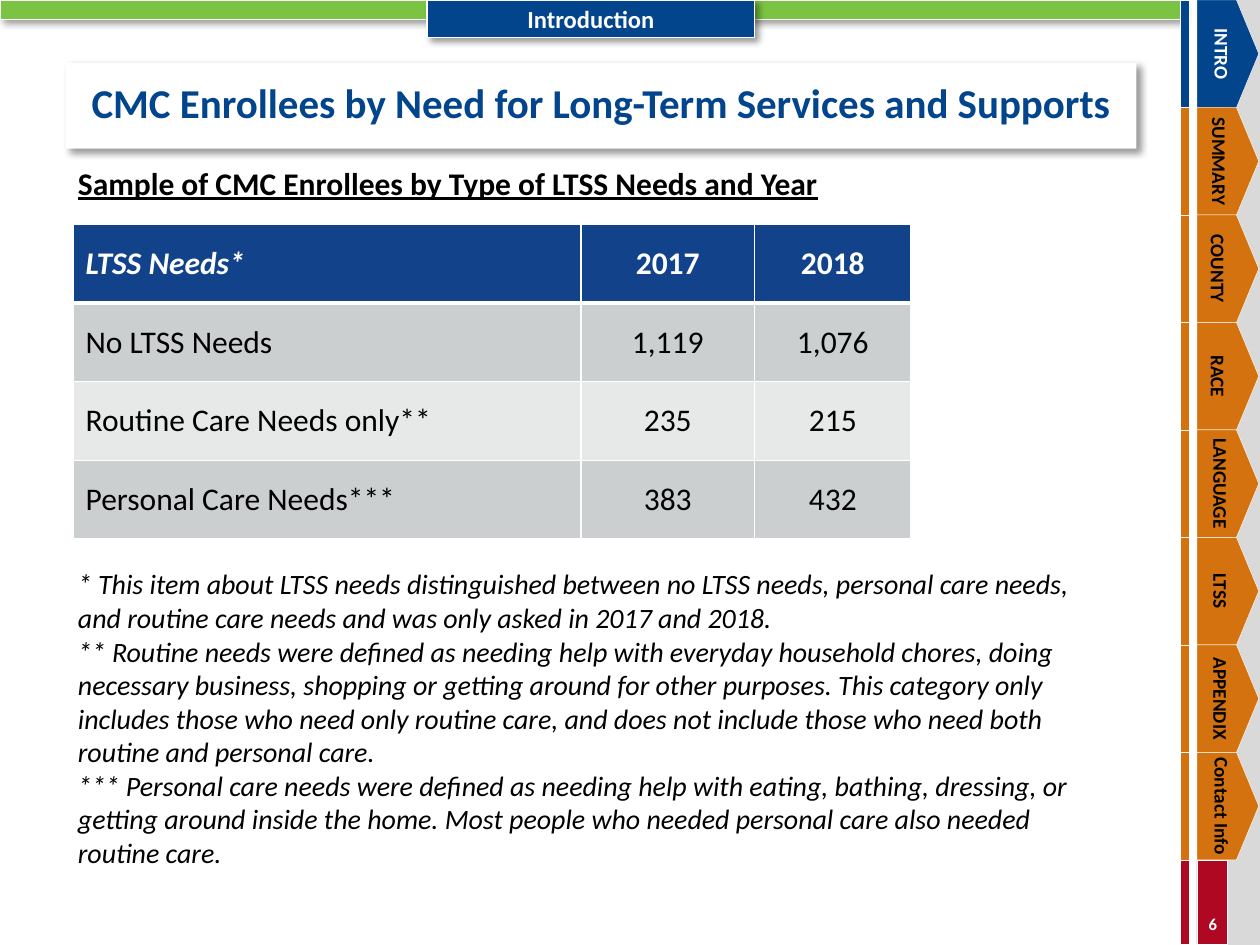
from lxml.etree import SubElement
from pptx import Presentation
from pptx.dml.color import RGBColor
from pptx.enum.shapes import MSO_SHAPE
from pptx.enum.text import MSO_ANCHOR, MSO_AUTO_SIZE, PP_ALIGN
from pptx.oxml.ns import qn
from pptx.util import Inches, Pt

WHITE = RGBColor(0xFF, 0xFF, 0xFF)
BLACK = RGBColor(0, 0, 0)
INK = RGBColor(0x01, 0x02, 0x04)
BLUE = RGBColor(0x02, 0x45, 0x8C)
HEADER_BLUE = RGBColor(0x12, 0x43, 0x8A)
ORANGE = RGBColor(0xD4, 0x72, 0x0F)
RED = RGBColor(0xAE, 0x08, 0x23)
GREEN = RGBColor(0x7B, 0xC3, 0x42)
GREY = RGBColor(0xD9, 0xD9, 0xD9)
BAND_DARK = RGBColor(0xCC, 0xCF, 0xD0)
BAND_LIGHT = RGBColor(0xE7, 0xE9, 0xE9)

SECTION = "Introduction"
TITLE = "CMC Enrollees by Need for Long-Term Services and Supports"
SUBTITLE = "Sample of CMC Enrollees by Type of LTSS Needs and Year"
PAGE_NUMBER = "6"
TABS = [
    ("INTRO", 9.61), ("SUMMARY", 9.59), ("COUNTY", 9.58), ("RACE", 9.58),
    ("LANGUAGE", 9.6), ("LTSS", 9.6), ("APPENDIX", 9.6), ("Contact Info", 9.61),
]
ROWS = [
    ("LTSS Needs*", "2017", "2018"),
    ("No LTSS Needs", "1,119", "1,076"),
    ("Routine Care Needs only**", "235", "215"),
    ("Personal Care Needs***", "383", "432"),
]
COLUMN_WIDTHS = [4.03, 1.38, 1.24]
ROW_HEIGHT = 0.625
NOTES = [
    "* This item about LTSS needs distinguished between no LTSS needs, personal care needs, "
    "and routine care needs and was only asked in 2017 and 2018.",
    "** Routine needs were defined as needing help with everyday household chores, doing "
    "necessary business, shopping or getting around for other purposes. This category only "
    "includes those who need only routine care, and does not include those who need both "
    "routine and personal care.",
    "*** Personal care needs were defined as needing help with eating, bathing, dressing, or "
    "getting around inside the home. Most people who needed personal care also needed "
    "routine care.",
]
STRIP_LEFT, STRIP_WIDTH = 9.37, 0.07
TAB_LEFT, TAB_WIDTH, TAB_HEIGHT = 9.5, 0.49, 0.853


def write(frame, text, size=18, color=BLACK, bold=False, italic=False, underline=False,
          align=PP_ALIGN.LEFT, anchor=MSO_ANCHOR.TOP, spacing=None, inset=None):
    frame.word_wrap = True
    frame.auto_size = MSO_AUTO_SIZE.NONE
    frame.vertical_anchor = anchor
    if inset is not None:
        frame.margin_left = frame.margin_right = Inches(inset)
        frame.margin_top = frame.margin_bottom = Inches(inset)
    lines = [text] if isinstance(text, str) else text
    for index, line in enumerate(lines):
        para = frame.paragraphs[0] if index == 0 else frame.add_paragraph()
        para.alignment = align
        if spacing:
            para.line_spacing = spacing
        span = para.add_run()
        span.text = line
        font = span.font
        font.name, font.size, font.color.rgb = "Calibri", Pt(size), color
        font.bold, font.italic, font.underline = bold, italic, underline


def add_text(page, area, text, **style):
    box = page.shapes.add_textbox(*map(Inches, area))
    write(box.text_frame, text, **style)
    return box


def add_shadow(shape):
    shape.shadow.inherit = False
    effects = shape.element.spPr.find(qn("a:effectLst"))
    outer = SubElement(effects, qn("a:outerShdw"), blurRad=str(Pt(4)), dist=str(Pt(3)),
                       dir=str(45 * 60000), algn="tl", rotWithShape="0")
    tint = SubElement(outer, qn("a:srgbClr"), val="000000")
    SubElement(tint, qn("a:alpha"), val="40000")


def add_block(page, area, color, kind=MSO_SHAPE.RECTANGLE, line=0.25):
    shape = page.shapes.add_shape(kind, *map(Inches, area))
    shape.shadow.inherit = False
    shape.fill.solid()
    shape.fill.fore_color.rgb = color
    if line:
        shape.line.color.rgb = WHITE
        shape.line.width = Pt(line)
    else:
        shape.line.fill.background()
    return shape


def add_borders(cell, bottom):
    properties = cell._tc.get_or_add_tcPr()
    for side, width in (("L", 1), ("R", 1), ("T", 1), ("B", bottom)):
        edge = SubElement(properties, qn(f"a:ln{side}"), w=str(Pt(width)))
        fill = SubElement(edge, qn("a:solidFill"))
        SubElement(fill, qn("a:srgbClr"), val=str(WHITE))


def add_tabs(page):
    for index, (label, label_left) in enumerate(TABS):
        top = index * TAB_HEIGHT
        current = index == 0
        color = BLUE if current else ORANGE
        add_block(page, (STRIP_LEFT, top, STRIP_WIDTH, TAB_HEIGHT), color)
        tab = add_block(page, (TAB_LEFT, top, TAB_WIDTH, TAB_HEIGHT), color, MSO_SHAPE.PENTAGON)
        tab.adjustments[0] = 0.36
        box = add_text(page, (label_left, top, 0.3, TAB_HEIGHT), label, size=11, bold=True,
                       color=WHITE if current else BLACK, align=PP_ALIGN.CENTER,
                       anchor=MSO_ANCHOR.BOTTOM, spacing=0.85, inset=0)
        box.element.txBody.bodyPr.set("vert", "vert")


def add_needs_table(page):
    table = page.shapes.add_table(
        len(ROWS), len(COLUMN_WIDTHS), Inches(0.58), Inches(1.78),
        Inches(sum(COLUMN_WIDTHS)), Inches(ROW_HEIGHT * len(ROWS))).table
    table.horz_banding = False
    for column, width in zip(table.columns, COLUMN_WIDTHS):
        column.width = Inches(width)
    for r, values in enumerate(ROWS):
        table.rows[r].height = Inches(ROW_HEIGHT)
        header = r == 0
        band = HEADER_BLUE if header else (BAND_DARK if r % 2 else BAND_LIGHT)
        for c, value in enumerate(values):
            cell = table.cell(r, c)
            add_borders(cell, bottom=3 if header else 1)
            cell.fill.solid()
            cell.fill.fore_color.rgb = band
            cell.vertical_anchor = MSO_ANCHOR.MIDDLE
            if c and not header:
                cell.margin_left = cell.margin_right = Inches(0.05)
                cell.margin_top = cell.margin_bottom = 0
            para = cell.text_frame.paragraphs[0]
            para.alignment = PP_ALIGN.CENTER if c else PP_ALIGN.LEFT
            span = para.add_run()
            span.text = value
            font = span.font
            font.name, font.size = "Calibri", Pt(18)
            font.bold, font.italic = header, header and c == 0
            font.color.rgb = WHITE if header else (INK if c else BLACK)


def main():
    deck = Presentation()
    deck.slide_width, deck.slide_height = Inches(10), Inches(7.5)
    page = deck.slides.add_slide(deck.slide_layouts[5])

    add_block(page, (9.7, 0, 0.3, 7.5), GREY, line=0)
    foot = TAB_HEIGHT * len(TABS)
    for left, width in ((TAB_LEFT, 0.24), (STRIP_LEFT, STRIP_WIDTH)):
        add_block(page, (left, foot, width, 0.67), RED)
    add_text(page, (TAB_LEFT, 7.25, 0.25, 0.16), PAGE_NUMBER, size=9.5, color=WHITE,
             bold=True, align=PP_ALIGN.CENTER, anchor=MSO_ANCHOR.MIDDLE, inset=0)
    add_shadow(add_block(page, (0, 0, STRIP_LEFT, 0.15), GREEN))
    add_tabs(page)

    section = add_block(page, (3.39, 0, 2.6, 0.3), BLUE, line=0.75)
    add_shadow(section)
    write(section.text_frame, SECTION, size=14, color=WHITE, bold=True,
          align=PP_ALIGN.CENTER, anchor=MSO_ANCHOR.MIDDLE)

    title = page.shapes.title
    title.left, title.top, title.width, title.height = map(Inches, (0.52, 0.5, 8.5, 0.68))
    title.fill.solid()
    title.fill.fore_color.rgb = WHITE
    add_shadow(title)
    write(title.text_frame, TITLE, size=23.4, color=BLUE, bold=True,
          align=PP_ALIGN.CENTER, anchor=MSO_ANCHOR.MIDDLE, spacing=0.85)

    add_text(page, (0.52, 1.25, 8.42, 0.45), SUBTITLE, bold=True, underline=True)
    add_needs_table(page)
    add_text(page, (0.52, 4.45, 8.15, 2.71), NOTES, size=16, italic=True)
    deck.save("out.pptx")


if __name__ == "__main__":
    main()
